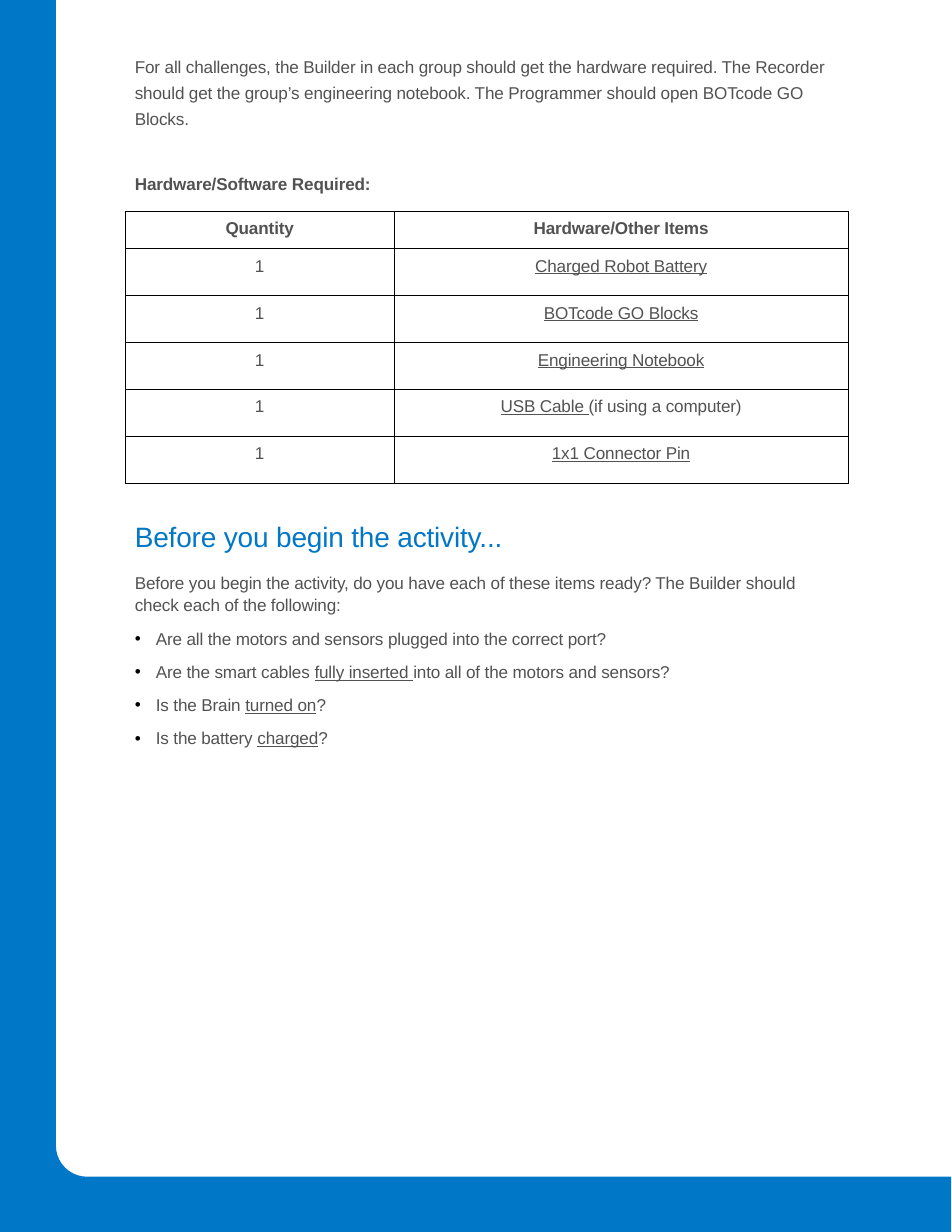
import math

from lxml import etree
from pptx import Presentation
from pptx.dml.color import RGBColor
from pptx.enum import text
from pptx.oxml import ns
from pptx.util import Pt

BLUE = "0077C7"
GRAY = "525252"
BLACK = "000000"
WHITE = "FFFFFF"
TEXT_LEFT = 85.7


def color(value):
    return RGBColor.from_string(value)


def child(parent, tag, **attributes):
    return etree.SubElement(parent, ns.qn(tag), attributes)


def add_runs(paragraph, runs, size=11, fill=GRAY, bold=False):
    for content, underlined in runs:
        run = paragraph.add_run()
        run.text = content
        font = run.font
        font.name = "Arial"
        font.size = Pt(size)
        font.bold = bold
        font.underline = underlined
        font.color.rgb = color(fill)
        run._r.get_or_add_rPr().set("spc", "-10")


def add_bullet(paragraph):
    properties = paragraph._p.get_or_add_pPr()
    properties.set("marL", str(Pt(13.5)))
    properties.set("indent", str(Pt(-13.5)))
    bullet_color = child(properties, "a:buClr")
    child(bullet_color, "a:srgbClr", val=BLACK)
    child(properties, "a:buFont", typeface="Arial")
    child(properties, "a:buChar", char="•")


def prepare_frame(frame, top_inset):
    frame.word_wrap = True
    frame.auto_size = text.MSO_AUTO_SIZE.NONE
    frame.vertical_anchor = text.MSO_ANCHOR.TOP
    frame.margin_left = Pt(1)
    frame.margin_right = frame.margin_bottom = Pt(0)
    frame.margin_top = Pt(top_inset)


def add_text_box(slide, top, width, height, top_inset):
    box = slide.shapes.add_textbox(Pt(TEXT_LEFT), Pt(top), Pt(width), Pt(height))
    prepare_frame(box.text_frame, top_inset)
    return box.text_frame


def add_page_border(slide):
    width, height, inner_left, inner_bottom, radius = 611.5, 792, 36, 756.5, 20
    steps = 10
    corner = []
    for step in range(steps + 1):
        angle = math.pi / 2 * (1 + step / steps)
        corner.append((inner_left + radius + radius * math.cos(angle),
                       inner_bottom - radius + radius * math.sin(angle)))
    points = [(0, 0), (0, height), (width, height), (width, inner_bottom),
              *corner, (inner_left, 0)]
    builder = slide.shapes.build_freeform(Pt(inner_left), 0)
    builder.add_line_segments([(Pt(x), Pt(y)) for x, y in points])
    shape = builder.convert_to_shape()
    shape.shadow.inherit = False
    shape.fill.solid()
    shape.fill.fore_color.rgb = color(BLUE)
    shape.line.fill.background()


def add_intro(slide):
    frame = add_text_box(slide, 31, 454.3, 91.5, 2)
    intro = frame.paragraphs[0]
    intro.line_spacing = 1.26
    add_runs(intro, [(
        "For all challenges, the Builder in each group should get the hardware "
        "required. The Recorder should get the group’s engineering notebook. "
        "The Programmer should open BOTcode GO Blocks.", False)])
    heading = frame.add_paragraph()
    heading.space_before = Pt(28.5)
    add_runs(heading, [("Hardware/Software Required:", False)], bold=True)


def style_cell(cell, runs, header):
    properties = cell._tc.get_or_add_tcPr()
    for side in ("L", "R", "T", "B"):
        line = child(properties, f"a:ln{side}", w=str(Pt(0.75)))
        child(child(line, "a:solidFill"), "a:srgbClr", val=BLACK)
    if header:
        cell.fill.solid()
        cell.fill.fore_color.rgb = color(WHITE)
    else:
        cell.fill.background()
    cell.margin_left = cell.margin_right = cell.margin_bottom = Pt(0)
    cell.margin_top = Pt(5)
    cell.vertical_anchor = text.MSO_ANCHOR.TOP
    paragraph = cell.text_frame.paragraphs[0]
    paragraph.alignment = text.PP_ALIGN.CENTER
    add_runs(paragraph, runs, bold=header)


def add_hardware_table(slide):
    items = [
        [("Charged Robot Battery", True)],
        [("BOTcode GO Blocks", True)],
        [("Engineering Notebook", True)],
        [("USB Cable ", True), ("(if using a computer)", False)],
        [("1x1 Connector Pin", True)],
    ]
    rows = [([("Quantity", False)], [("Hardware/Other Items", False)])]
    rows += [([("1", False)], item) for item in items]
    widths = (172.8, 291.8)
    heights = [24] + [30.2] * len(items)
    frame = slide.shapes.add_table(len(rows), len(widths), Pt(80.6), Pt(136),
                                   Pt(sum(widths)), Pt(sum(heights)))
    table = frame.table
    table.horz_banding = False
    for column, width in zip(table.columns, widths):
        column.width = Pt(width)
    for row_index, (cells, height) in enumerate(zip(rows, heights)):
        table.rows[row_index].height = Pt(height)
        for column_index, runs in enumerate(cells):
            style_cell(table.cell(row_index, column_index), runs, row_index == 0)


def set_title(slide):
    title = slide.shapes.title
    title.left, title.top = Pt(TEXT_LEFT), Pt(332)
    title.width, title.height = Pt(436), Pt(24)
    prepare_frame(title.text_frame, 2)
    paragraph = title.text_frame.paragraphs[0]
    paragraph.alignment = text.PP_ALIGN.LEFT
    add_runs(paragraph, [("Before you begin the activity...", False)], 18, BLUE)


def add_checklist(slide):
    frame = add_text_box(slide, 366.5, 436, 114.5, 0)
    lead = frame.paragraphs[0]
    lead.line_spacing = 1.1
    add_runs(lead, [(
        "Before you begin the activity, do you have each of these items ready? "
        "The Builder should check each of the following:", False)])
    checks = [
        [("Are all the motors and sensors plugged into the correct port?", False)],
        [("Are the smart cables ", False), ("fully inserted ", True),
         ("into all of the motors and sensors?", False)],
        [("Is the Brain ", False), ("turned on", True), ("?", False)],
        [("Is the battery ", False), ("charged", True), ("?", False)],
    ]
    for runs in checks:
        paragraph = frame.add_paragraph()
        add_bullet(paragraph)
        paragraph.space_before = Pt(8.2)
        add_runs(paragraph, runs)


def main():
    presentation = Presentation()
    presentation.slide_width = Pt(612)
    presentation.slide_height = Pt(792)
    slide = presentation.slides.add_slide(presentation.slide_layouts[5])
    add_page_border(slide)
    add_intro(slide)
    add_hardware_table(slide)
    set_title(slide)
    add_checklist(slide)
    presentation.save("out.pptx")


if __name__ == "__main__":
    main()
